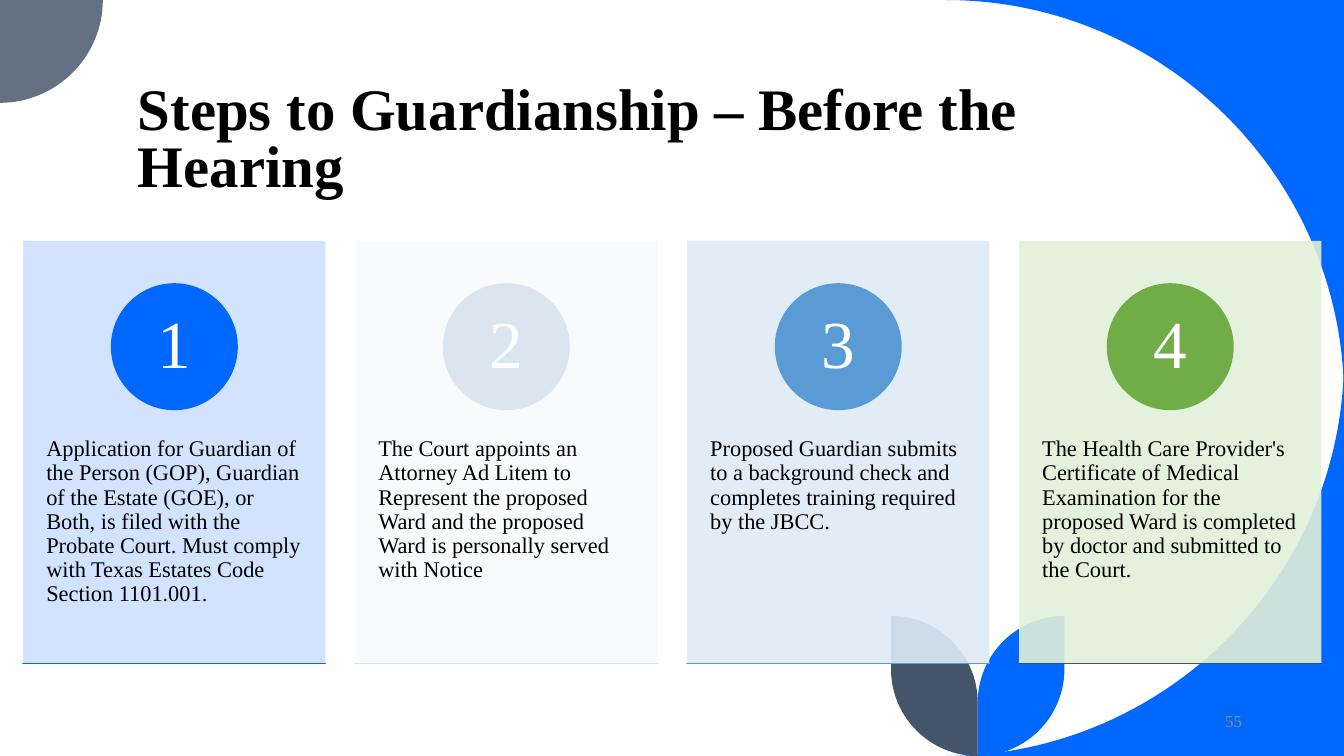
"""Build the slide on the steps to guardianship before the hearing."""
from dataclasses import dataclass

from lxml import etree
from pptx import Presentation
from pptx.dml.color import RGBColor
from pptx.enum.shapes import MSO_SHAPE
from pptx.enum.text import MSO_ANCHOR, PP_ALIGN
from pptx.oxml.ns import qn
from pptx.slide import Slide
from pptx.util import Inches, Pt

RECTANGLE, OVAL = MSO_SHAPE.RECTANGLE, MSO_SHAPE.OVAL
TOP, MIDDLE, BOTTOM = MSO_ANCHOR.TOP, MSO_ANCHOR.MIDDLE, MSO_ANCHOR.BOTTOM
LEFT, CENTER, RIGHT = PP_ALIGN.LEFT, PP_ALIGN.CENTER, PP_ALIGN.RIGHT

Point = tuple[float, float]
Segment = tuple[Point, ...]
Frame = tuple[float, float, float, float]


@dataclass(frozen=True)
class Theme:
    font: str = "Times New Roman"
    blue: str = "0068FF"
    slate: str = "637183"
    navy: str = "44546A"
    charcoal: str = "434E5E"
    pale: str = "DAE5EF"
    sky: str = "5B9BD5"
    green: str = "70AD47"
    black: str = "000000"
    white: str = "FFFFFF"
    gray: str = "8C8C8C"
    card_blue: str = "CCE1FF"
    card_white: str = "F8FAFC"
    card_sky: str = "DEEBF7"
    card_green: str = "E2F0D9"
    title_size: int = 42
    number_size: int = 48
    body_size: int = 16
    page_size: int = 12


THEME = Theme()
WIDTH, HEIGHT = 40 / 3, 7.5
CARD_LEFT, CARD_TOP, CARD_WIDTH, CARD_HEIGHT = 0.23, 2.39, 3, 4.19
CARD_PITCH = (10.11 - CARD_LEFT) / 3
CIRCLE, NUMBER = 1.26, 0.89
ARC_PULL = 0.55


@dataclass(frozen=True)
class Step:
    text: str
    card: str
    circle: str
    rule_fill: str
    rule_line: str


@dataclass(frozen=True)
class TextStyle:
    size: int
    color: str = THEME.black
    bold: bool = False
    align: PP_ALIGN = LEFT
    anchor: MSO_ANCHOR = TOP
    spacing: float = 1.0
    inset_x: float = 0.1
    inset_y: float = 0.05


TITLE = TextStyle(THEME.title_size, bold=True, anchor=BOTTOM, spacing=0.8)
BODY = TextStyle(THEME.body_size, spacing=0.9, inset_x=0.23, inset_y=0.36)
NUMERAL = TextStyle(THEME.number_size, THEME.white, align=CENTER, anchor=MIDDLE,
                    spacing=0.9, inset_y=0.01)
PAGE_NUMBER = TextStyle(THEME.page_size, THEME.gray, align=RIGHT, anchor=MIDDLE)

STEPS = (
    Step("Application for Guardian of the Person (GOP), Guardian of the Estate (GOE), "
         "or Both, is filed with the Probate Court. Must comply with Texas Estates Code "
         "Section 1101.001.",
         THEME.card_blue, THEME.blue, THEME.slate, THEME.blue),
    Step("The Court appoints an Attorney Ad Litem to Represent the proposed Ward and "
         "the proposed Ward is personally served with Notice",
         THEME.card_white, THEME.pale, THEME.sky, THEME.pale),
    Step("Proposed Guardian submits to a background check and completes training "
         "required by the JBCC.",
         THEME.card_sky, THEME.sky, THEME.pale, THEME.sky),
    Step("The Health Care Provider's Certificate of Medical Examination for the "
         "proposed Ward is completed by doctor and submitted to the Court.",
         THEME.card_green, THEME.green, THEME.charcoal, THEME.charcoal),
)


def quarter(start: Point, corner: Point, end: Point) -> Segment:
    """Return the curve points of a quarter circle bulging towards a corner."""
    first, second = (
        (x + ARC_PULL * (corner[0] - x), y + ARC_PULL * (corner[1] - y))
        for x, y in (start, end))
    return first, second, end


def add_outline(page: Slide, start: Point, segments: list[Segment], color: str) -> None:
    """Draw a closed outline from one-point lines and three-point curves."""
    builder = page.shapes.build_freeform(*map(Inches, start), scale=1.0)
    builder.add_line_segments(
        [(Inches(x), Inches(y)) for segment in segments for x, y in segment], close=True)
    outline = builder.convert_to_shape()
    lines = iter(list(outline.element.iter(qn("a:lnTo"))))
    for segment in segments:
        lead, *others = [next(lines) for _ in segment]
        if others:
            lead.tag = qn("a:cubicBezTo")
        for other in others:
            lead.append(other[0])
            other.getparent().remove(other)
    outline.shadow.inherit = False
    outline.fill.solid()
    outline.fill.fore_color.rgb = RGBColor.from_string(color)
    outline.line.fill.background()


def add_preset(page: Slide, kind: MSO_SHAPE, frame: Frame, color: str,
               line: str | None = None, opacity: int = 100) -> None:
    """Draw a preset shape with an optional line and opacity in percent."""
    shape = page.shapes.add_shape(kind, *map(Inches, frame))
    shape.shadow.inherit = False
    shape.fill.solid()
    shape.fill.fore_color.rgb = RGBColor.from_string(color)
    if opacity < 100:
        tint = shape.element.spPr.find(qn("a:solidFill"))[0]
        etree.SubElement(tint, qn("a:alpha")).set("val", str(opacity * 1000))
    if line:
        shape.line.color.rgb = RGBColor.from_string(line)
        shape.line.width = Pt(1)
    else:
        shape.line.fill.background()


def add_text(page: Slide, text: str, frame: Frame, style: TextStyle) -> None:
    """Place a wrapped single-paragraph text box."""
    box = page.shapes.add_textbox(*map(Inches, frame)).text_frame
    box.word_wrap = True
    box.vertical_anchor = style.anchor
    box.margin_left = box.margin_right = Inches(style.inset_x)
    box.margin_top = box.margin_bottom = Inches(style.inset_y)
    para = box.paragraphs[0]
    para.text = text
    para.alignment = style.align
    para.line_spacing = style.spacing
    para.font.name = THEME.font
    para.font.size = Pt(style.size)
    para.font.bold = style.bold
    para.font.color.rgb = RGBColor.from_string(style.color)


def add_backdrop(page: Slide) -> None:
    """Draw the blue corners, the slate quarter circle and the two leaves."""
    sweep, disc, leaf, stem, leaf_top = 3.95, 1.02, 0.86, 9.7, 6.11
    for edge, inner in ((0, sweep), (HEIGHT, HEIGHT - sweep)):
        start, corner = (WIDTH - sweep, edge), (WIDTH, edge)
        add_outline(page, start, [quarter(start, corner, (WIDTH, inner)), (corner,)],
                    THEME.blue)
    add_outline(page, (0, 0),
                [((disc, 0),), quarter((disc, 0), (disc, disc), (0, disc))], THEME.slate)
    for side, color in ((leaf, THEME.blue), (-leaf, THEME.navy)):
        tip, shoulder = (stem + side, leaf_top), (stem + side, HEIGHT - leaf)
        foot, hip = (stem, HEIGHT), (stem, leaf_top + leaf)
        add_outline(page, tip,
                    [(shoulder,), quarter(shoulder, (stem + side, HEIGHT), foot),
                     (hip,), quarter(hip, (stem, leaf_top), tip)], color)


def add_step(page: Slide, index: int, step: Step) -> None:
    """Draw one numbered card."""
    left = CARD_LEFT + index * CARD_PITCH
    middle = left + CARD_WIDTH / 2
    add_preset(page, RECTANGLE, (left, CARD_TOP, CARD_WIDTH, CARD_HEIGHT), step.card,
               opacity=90)
    add_text(page, step.text, (left, 3.98, CARD_WIDTH, 2.52), BODY)
    add_preset(page, OVAL, (middle - CIRCLE / 2, 2.81, CIRCLE, CIRCLE), step.circle)
    add_text(page, str(index + 1), (middle - NUMBER / 2, 2.99, NUMBER, NUMBER), NUMERAL)
    add_preset(page, RECTANGLE, (left, CARD_TOP + CARD_HEIGHT, CARD_WIDTH, 0),
               step.rule_fill, line=step.rule_line)


def main() -> None:
    """Build and save the deck."""
    deck = Presentation()
    deck.slide_width, deck.slide_height = Inches(WIDTH), Inches(HEIGHT)
    page = deck.slides.add_slide(deck.slide_layouts[6])
    add_backdrop(page)
    add_text(page, "Steps to Guardianship – Before the Hearing",
             (1.27, 0.11, 10.69, 1.91), TITLE)
    for index, step in enumerate(STEPS):
        add_step(page, index, step)
    add_text(page, "55", (9.42, 6.95, 3, 0.4), PAGE_NUMBER)
    deck.save("out.pptx")


if __name__ == "__main__":
    main()
